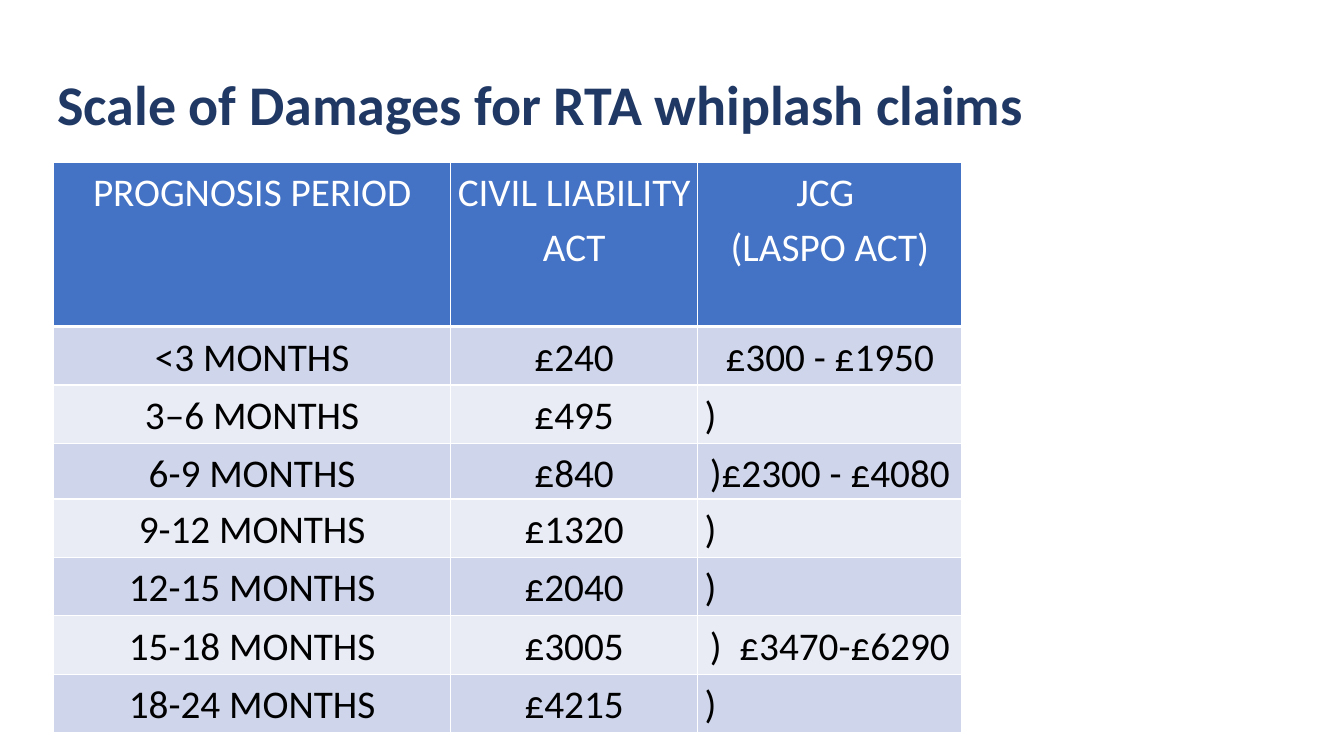
from dataclasses import dataclass

from lxml import etree
from pptx import Presentation
from pptx import util as u
from pptx.dml import color
from pptx.enum import text
from pptx.oxml import ns

FONT = "Calibri"
NAVY, BLUE, WHITE, BLACK = "203864", "4472C4", "FFFFFF", "000000"
BANDS = ("CFD5EA", "E9EBF5")
COLUMN_WIDTHS = (3.94, 2.45, 2.62)
HEADINGS = ("PROGNOSIS PERIOD", "CIVIL LIABILITY ACT", "JCG \n(LASPO ACT)")
HEADER_HEIGHT = 1.63


@dataclass
class Tariff:
    period: str
    civil_liability: str
    guideline: str
    height: float = 0.58


TARIFFS = (
    Tariff("<3 MONTHS", "£240", "£300 - £1950"),
    Tariff("3–6 MONTHS", "£495", ")"),
    Tariff("6-9 MONTHS", "£840", ")£2300 - £4080", 0.55),
    Tariff("9-12 MONTHS", "£1320", ")"),
    Tariff("12-15 MONTHS", "£2040", ")"),
    Tariff("15-18 MONTHS", "£3005", ")  £3470-£6290"),
    Tariff("18-24 MONTHS", "£4215", ")"),
)


def rgb(value: str) -> color.RGBColor:
    return color.RGBColor.from_string(value)


def format_paragraph(paragraph, size: float, ink: str, bold: bool, spacing: float) -> None:
    paragraph.line_spacing = spacing
    for run in paragraph.runs:
        run.font.name = FONT
        run.font.size = u.Pt(size)
        run.font.bold = bold
        run.font.color.rgb = rgb(ink)


def set_borders(cell, bottom_width: float) -> None:
    properties = cell._tc.get_or_add_tcPr()
    widths = {"a:lnL": 1, "a:lnR": 1, "a:lnT": 1, "a:lnB": bottom_width}
    for position, (tag, width) in enumerate(widths.items()):
        line = etree.Element(ns.qn(tag), w=str(u.Pt(width)))
        fill = etree.SubElement(line, ns.qn("a:solidFill"))
        etree.SubElement(fill, ns.qn("a:srgbClr"), val=WHITE)
        properties.insert(position, line)


def fill_cell(cell, wording: str, fill: str, ink: str, bottom_width: float) -> None:
    cell.fill.solid()
    cell.fill.fore_color.rgb = rgb(fill)
    cell.margin_left = cell.margin_right = u.Inches(0.07)
    cell.margin_top = cell.margin_bottom = 0
    cell.text_frame.text = wording
    alignment = text.PP_ALIGN.LEFT if wording == ")" else text.PP_ALIGN.CENTER
    for paragraph in cell.text_frame.paragraphs:
        paragraph.alignment = alignment
        format_paragraph(paragraph, 28, ink, False, 1.15)
    set_borders(cell, bottom_width)


def add_title(slide) -> None:
    box = slide.shapes.add_textbox(
        u.Inches(0.47), u.Inches(0.34), u.Inches(11.5), u.Inches(1.45))
    frame = box.text_frame
    frame.word_wrap = True
    frame.vertical_anchor = text.MSO_ANCHOR.MIDDLE
    frame.text = "Scale of Damages for RTA whiplash claims"
    format_paragraph(frame.paragraphs[0], 40, NAVY, True, 0.9)


def add_damages_table(slide) -> None:
    heights = [HEADER_HEIGHT] + [tariff.height for tariff in TARIFFS]
    table = slide.shapes.add_table(
        len(heights), len(COLUMN_WIDTHS), u.Inches(0.53), u.Inches(1.61),
        u.Inches(sum(COLUMN_WIDTHS)), u.Inches(sum(heights))).table
    for column, width in zip(table.columns, COLUMN_WIDTHS):
        column.width = u.Inches(width)
    for row, height in zip(table.rows, heights):
        row.height = u.Inches(height)
    for cell, heading in zip(table.rows[0].cells, HEADINGS):
        fill_cell(cell, heading, BLUE, WHITE, 3)
    for index, tariff in enumerate(TARIFFS):
        wordings = (tariff.period, tariff.civil_liability, tariff.guideline)
        for cell, wording in zip(table.rows[index + 1].cells, wordings):
            fill_cell(cell, wording, BANDS[index % 2], BLACK, 1)


def main() -> None:
    presentation = Presentation()
    presentation.slide_width = u.Inches(13.33)
    presentation.slide_height = u.Inches(7.5)
    slide = presentation.slides.add_slide(presentation.slide_layouts[6])
    add_title(slide)
    add_damages_table(slide)
    presentation.save("out.pptx")


if __name__ == "__main__":
    main()
